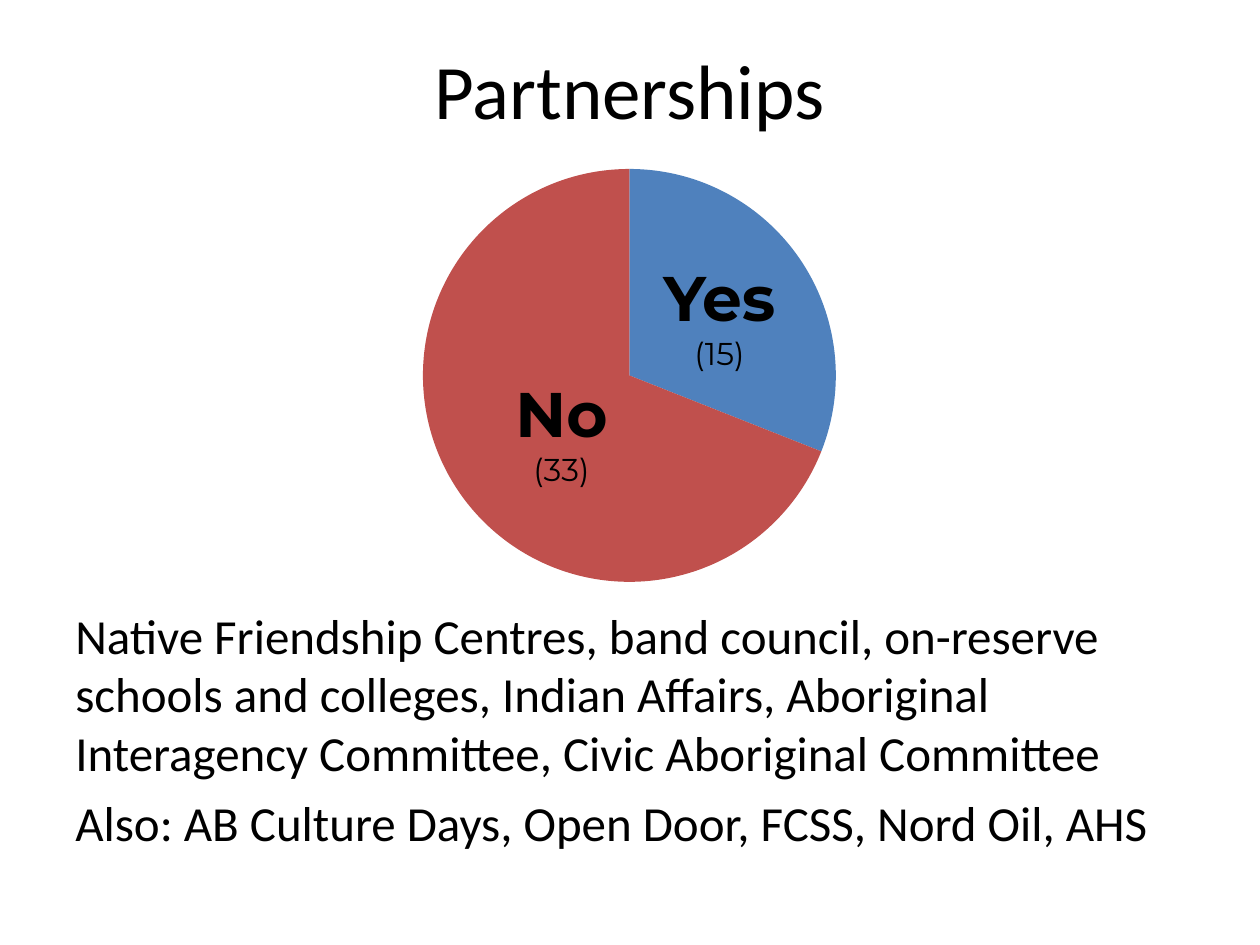
from lxml import etree
from pptx import Presentation
from pptx import util as u
from pptx.chart.data import CategoryChartData
from pptx.dml.color import RGBColor
from pptx.enum import chart as ch, text as tx

TITLE = "Partnerships"
NOTES = [
    "Native Friendship Centres, band council, on-reserve schools and colleges, "
    "Indian Affairs, Aboriginal Interagency Committee, Civic Aboriginal Committee",
    "Also: AB Culture Days, Open Door, FCSS, Nord Oil, AHS",
]
SHARES = {"1": 31, "2": 69}
LABELS = [("Yes", "(15)", (620, 252)), ("No", "(33)", (462, 368))]
LABEL_SIZE = (199, 127)

THEME = {
    "ink": "000000",
    "slices": ["4F81BD", "C0504D"],
    "title": {"name": "Calibri", "size": 44},
    "body": {"name": "Calibri", "size": 28},
    "chart": {"name": "Calibri", "size": 18},
    "answer": {"name": "Montserrat", "size": 36, "bold": True},
    "count": {"name": "Montserrat", "size": 18, "bold": False},
}
CHART = (210, 151, 840, 449)
PIE = (423, 169, 413, 413)


def px(n):
    return round(n * u.Inches(1) / 126)


def style(font, key):
    for name, val in THEME[key].items():
        setattr(font, name, u.Pt(val) if name == "size" else val)
    font.color.rgb = RGBColor.from_string(THEME["ink"])


def place(shape, box):
    for name, val in zip(("left", "top", "width", "height"), box):
        setattr(shape, name, px(val))


def write(frame, lines, align, gap=0):
    """Fill a text frame with (text, theme key) lines."""
    frame.word_wrap = True
    for i, (line, key) in enumerate(lines):
        para = frame.paragraphs[0] if i == 0 else frame.add_paragraph()
        para.alignment = align
        para.space_before = u.Pt(gap)
        run = para.add_run()
        run.text = line
        style(run.font, key)


def fix_plot(chart):
    """Pin the pie's inner plot area inside the chart frame."""
    area = chart._chartSpace.chart.plotArea
    ns = area.nsmap["c"]
    for old in area.findall(f"{{{ns}}}layout"):
        area.remove(old)
    layout = etree.Element(f"{{{ns}}}layout")
    area.insert(0, layout)
    manual = etree.SubElement(layout, f"{{{ns}}}manualLayout")
    left, top, wide, high = CHART
    vals = {
        "layoutTarget": "inner", "xMode": "edge", "yMode": "edge",
        "x": (PIE[0] - left) / wide, "y": (PIE[1] - top) / high,
        "w": PIE[2] / wide, "h": PIE[3] / high,
    }
    for name, val in vals.items():
        etree.SubElement(manual, f"{{{ns}}}{name}", val=str(val))


def add_pie(slide):
    data = CategoryChartData()
    data.categories = list(SHARES)
    data.add_series("Series 1", list(SHARES.values()))
    box = [px(n) for n in CHART]
    chart = slide.shapes.add_chart(ch.XL_CHART_TYPE.PIE, *box, data).chart
    chart.has_legend = chart.has_title = False
    style(chart.font, "chart")
    plot = chart.plots[0]
    plot.vary_by_categories = True
    for i, color in enumerate(THEME["slices"]):
        fill = plot.series[0].points[i].format.fill
        fill.solid()
        fill.fore_color.rgb = RGBColor.from_string(color)
    fix_plot(chart)


def main():
    prs = Presentation()
    prs.slide_width, prs.slide_height = px(1260), px(945)
    slide = prs.slides.add_slide(prs.slide_layouts[5])

    title = slide.shapes.title
    place(title, (63, 10, 1134, 158))
    title.text_frame.vertical_anchor = tx.MSO_ANCHOR.MIDDLE
    write(title.text_frame, [(TITLE, "title")], tx.PP_ALIGN.CENTER)

    body = slide.shapes.add_textbox(*[px(n) for n in (63, 599, 1134, 305)])
    write(body.text_frame, [(note, "body") for note in NOTES],
          tx.PP_ALIGN.LEFT, gap=6)

    add_pie(slide)
    for answer, count, spot in LABELS:
        label = slide.shapes.add_textbox(*[px(n) for n in spot + LABEL_SIZE])
        write(label.text_frame, [(answer, "answer"), (count, "count")],
              tx.PP_ALIGN.CENTER)
        label.text_frame.auto_size = tx.MSO_AUTO_SIZE.SHAPE_TO_FIT_TEXT
    prs.save("out.pptx")


if __name__ == "__main__":
    main()
